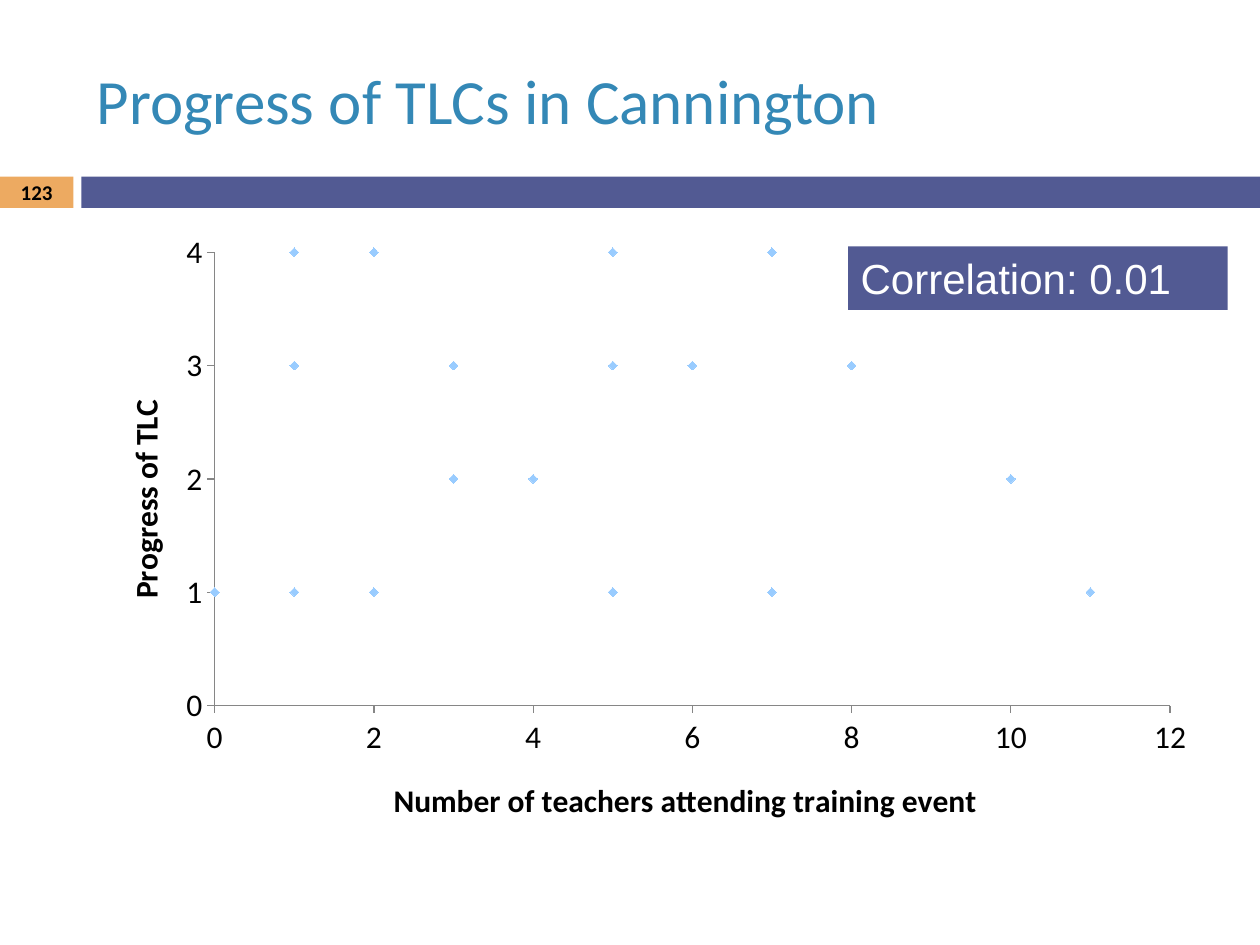
from lxml import etree
from pptx import Presentation
from pptx import util as u
from pptx.chart.data import XyChartData
from pptx.dml.color import RGBColor
from pptx.enum import chart as ch, shapes, text
from pptx.oxml import parse_xml
from pptx.oxml.ns import nsdecls, qn

INDIGO = RGBColor(0x52, 0x5A, 0x93)
ORANGE = RGBColor(0xED, 0xAA, 0x61)
BLUE = RGBColor(0x34, 0x88, 0xB6)
SKY = RGBColor(0x99, 0xCC, 0xFF)
GREY = RGBColor(0x86, 0x86, 0x86)
BLACK = RGBColor(0, 0, 0)
WHITE = RGBColor(0xFF, 0xFF, 0xFF)

# (teachers attending, progress)
POINTS = [
    (5, 1), (4, 2), (1, 4), (6, 3), (11, 1), (7, 4), (2, 1), (1, 1), (10, 2),
    (0, 1), (7, 1), (3, 3), (8, 3), (5, 1), (3, 2), (5, 4), (0, 1), (3, 2),
    (1, 3), (5, 3), (2, 4),
]


def format_font(font, size, color, bold=False, name="Calibri"):
    font.name, font.size, font.bold = name, u.Pt(size), bold
    font.color.rgb = color


def write(tf, words, align=text.PP_ALIGN.LEFT, anchor=text.MSO_ANCHOR.MIDDLE,
          margin=0.25, **style):
    """Put one formatted paragraph into a text frame."""
    tf.word_wrap = True
    tf.vertical_anchor = anchor
    tf.margin_left = tf.margin_right = u.Cm(margin)
    p = tf.paragraphs[0]
    p.alignment = align
    r = p.add_run()
    r.text = words
    format_font(r.font, **style)


def place(parent, after, x, y, w=None, h=None):
    """Set a manual layout, in fractions of the chart, after a given child."""
    for old in parent.findall(qn("c:layout")):
        parent.remove(old)
    layout = parse_xml(f"<c:layout {nsdecls('c')}><c:manualLayout/></c:layout>")
    manual = layout[0]
    values = [("xMode", "edge"), ("yMode", "edge"),
              ("x", x), ("y", y), ("w", w), ("h", h)]
    if w is not None:
        values.insert(0, ("layoutTarget", "inner"))
    for tag, value in values:
        if value is not None:
            etree.SubElement(manual, qn(f"c:{tag}")).set("val", str(value))
    if after is None:
        parent.insert(0, layout)
    else:
        after.addnext(layout)


class Deck:
    def __init__(self, prs):
        self.s = prs.slides.add_slide(prs.slide_layouts[6])

    def bar(self, x, y, w, h, color):
        sp = self.s.shapes.add_shape(
            shapes.MSO_SHAPE.RECTANGLE, u.Cm(x), u.Cm(y), u.Cm(w), u.Cm(h))
        sp.shadow.inherit = False
        sp.fill.solid()
        sp.fill.fore_color.rgb = color
        sp.line.fill.background()
        return sp

    def label(self, x, y, w, h, words, **style):
        sp = self.s.shapes.add_textbox(u.Cm(x), u.Cm(y), u.Cm(w), u.Cm(h))
        write(sp.text_frame, words, **style)

    def axis(self, axis, title, maximum, step, x, y):
        axis.minimum_scale, axis.maximum_scale = 0, maximum
        axis.major_unit = step
        axis.has_major_gridlines = False
        axis.major_tick_mark = ch.XL_TICK_MARK.OUTSIDE
        axis.minor_tick_mark = ch.XL_TICK_MARK.NONE
        axis.format.line.color.rgb = GREY
        axis.format.line.width = u.Pt(0.75)
        axis.tick_labels.number_format = "General"
        axis.tick_labels.number_format_is_linked = False
        format_font(axis.tick_labels.font, 18, BLACK)
        tf = axis.axis_title.text_frame
        tf.text = title
        format_font(tf.paragraphs[0].runs[0].font, 18, BLACK, bold=True)
        node = axis.axis_title._element
        place(node, node.find(qn("c:tx")), x, y)

    def scatter(self, x, y, w, h, points):
        data = XyChartData()
        series = data.add_series("Series 1")
        for point in points:
            series.add_data_point(*point)
        chart = self.s.shapes.add_chart(
            ch.XL_CHART_TYPE.XY_SCATTER, u.Cm(x), u.Cm(y), u.Cm(w), u.Cm(h),
            data).chart
        chart.has_legend = chart.has_title = False
        format_font(chart.font, 18, BLACK)
        plot = chart.plots[0]
        plot.vary_by_categories = False
        dots = plot.series[0]
        dots.smooth = False
        dots.format.line.fill.background()
        dots.marker.style = ch.XL_MARKER_STYLE.DIAMOND
        dots.marker.size = 5
        dots.marker.format.fill.solid()
        dots.marker.format.fill.fore_color.rgb = SKY
        dots.marker.format.line.color.rgb = SKY
        self.axis(chart.category_axis,
                  "Number of teachers attending training event",
                  12, 2, 0.27, 0.89)
        self.axis(chart.value_axis, "Progress of TLC", 4, 1, 0.03, 0.28)
        area = chart._chartSpace.find(".//" + qn("c:plotArea"))
        place(area, None, 0.116, 0.051, 0.85, 0.731)


def main():
    prs = Presentation()
    prs.slide_width, prs.slide_height = u.Cm(25.4), u.Cm(19.05)
    deck = Deck(prs)
    deck.bar(0, 3.56, 1.48, 0.63, ORANGE)
    deck.bar(1.64, 3.56, 23.76, 0.63, INDIGO)
    deck.label(1.7, 0.64, 22.66, 2.74, "Progress of TLCs in Cannington",
               size=36, color=BLUE)
    deck.label(0, 3.54, 1.48, 0.68, "123", align=text.PP_ALIGN.CENTER,
               margin=0, size=12, color=BLACK, bold=True)
    deck.scatter(1.7, 4.45, 22.66, 12.5, POINTS)
    note = deck.bar(17.1, 4.97, 7.65, 1.28, INDIGO)
    write(note.text_frame, "Correlation: 0.01", anchor=text.MSO_ANCHOR.TOP,
          size=24, color=WHITE, name="Arial")
    prs.save("out.pptx")


if __name__ == "__main__":
    main()
